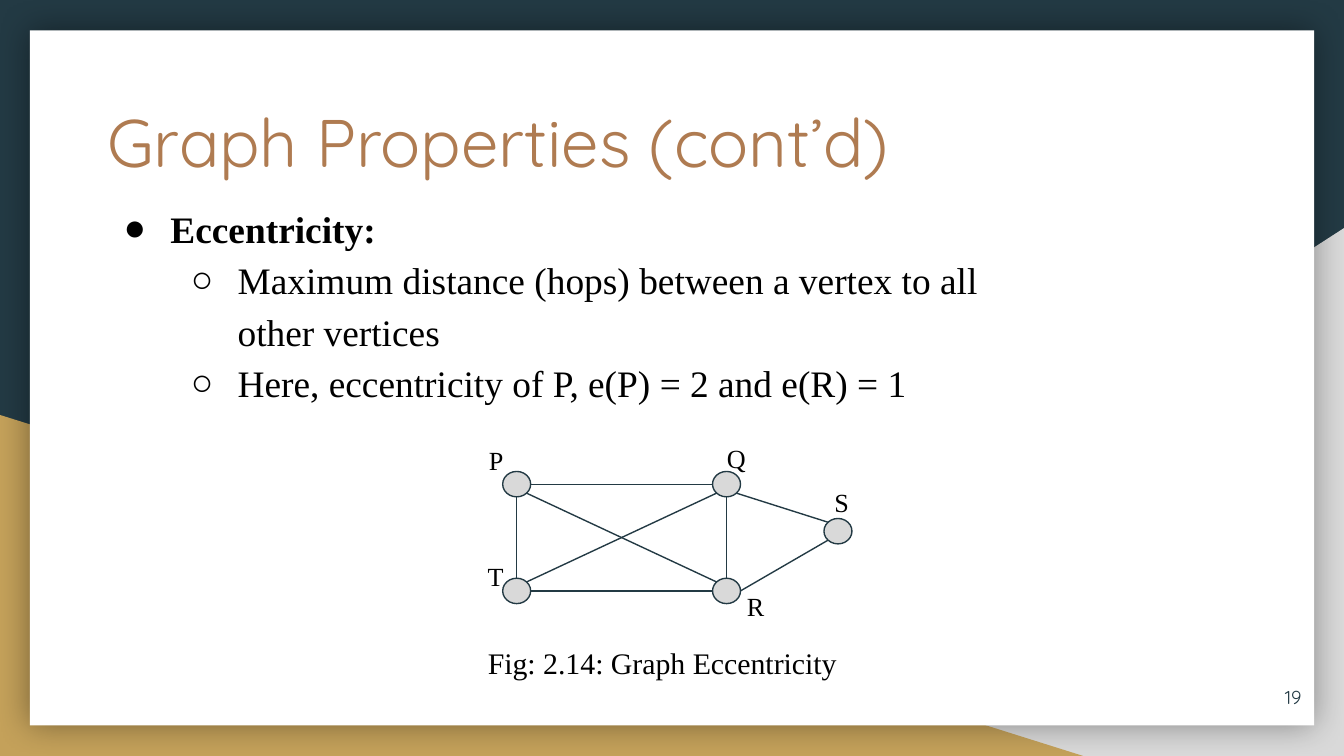
from dataclasses import dataclass
from math import sqrt
from typing import Optional

from lxml.etree import SubElement
from pptx import Presentation
from pptx.dml.color import RGBColor
from pptx.enum.shapes import MSO_CONNECTOR, MSO_SHAPE
from pptx.enum.text import MSO_ANCHOR, PP_ALIGN
from pptx.oxml.ns import qn
from pptx.util import Pt

DARK, GOLD, GREY, WHITE, BLACK = "233A44", "C4A15A", "D9D9D9", "FFFFFF", "000000"
BROWN = "AF7B51"
SERIF, SANS = "Times New Roman", "Quicksand"
NODE_WIDTH, NODE_HEIGHT = 15, 13.6
LINE_WIDTH = 0.75


@dataclass(frozen=True)
class Box:
    left: float
    top: float
    width: float
    height: float

    def lengths(self) -> tuple:
        """Return the four measures as lengths in points."""
        return Pt(self.left), Pt(self.top), Pt(self.width), Pt(self.height)


@dataclass(frozen=True)
class Style:
    font: str
    size: float
    color: str
    bold: bool = False


@dataclass(frozen=True)
class Vertex:
    x: float
    y: float
    label_left: float
    label_top: float

    def rim(self, across: int, down: int) -> tuple[float, float]:
        """Return the rim point in one of the eight compass directions."""
        reach = 0.5 / sqrt(across ** 2 + down ** 2)
        return self.x + across * reach * NODE_WIDTH, self.y + down * reach * NODE_HEIGHT


@dataclass(frozen=True)
class Edge:
    start: str
    start_side: tuple[int, int]
    end: str
    end_side: tuple[int, int]


@dataclass(frozen=True)
class Bullet:
    text: str
    sign: str
    indent: float
    bold: bool = False
    space_before: float = 0


LEFT_X, RIGHT_X, UPPER_Y, LOWER_Y = 276.8, 389.2, 259.4, 316.6
VERTICES = {
    "P": Vertex(LEFT_X, UPPER_Y, 254.9, 231.1),
    "Q": Vertex(RIGHT_X, UPPER_Y, 382.3, 229.7),
    "T": Vertex(LEFT_X, LOWER_Y, 254.2, 293),
    "R": Vertex(RIGHT_X, LOWER_Y, 393.1, 308.9),
    "S": Vertex(448.9, 284.6, 439.9, 253.4),
}
EDGES = [
    Edge("Q", (-1, 0), "P", (1, 0)),
    Edge("R", (-1, 0), "T", (1, 0)),
    Edge("R", (-1, -1), "P", (1, 1)),
    Edge("T", (1, -1), "Q", (-1, 1)),
    Edge("R", (1, 0), "S", (-1, 1)),
    Edge("Q", (1, 1), "S", (-1, -1)),
    Edge("R", (0, -1), "Q", (0, 1)),
    Edge("T", (0, -1), "P", (0, 1)),
]
BULLETS = [
    Bullet("Eccentricity:", "●", 36, True, 6),
    Bullet("Maximum distance (hops) between a vertex to all other vertices", "○", 72),
    Bullet("Here, eccentricity of P, e(P) = 2 and e(R) = 1", "○", 72),
]


def rgb(value: str) -> RGBColor:
    """Turn a hex string into a colour."""
    return RGBColor.from_string(value)


def add_panel(page, kind, box: Box, fill: str, line: Optional[str] = None):
    """Draw a filled preset shape with an optional outline."""
    shape = page.shapes.add_shape(kind, *box.lengths())
    shape.shadow.inherit = False
    shape.fill.solid()
    shape.fill.fore_color.rgb = rgb(fill)
    if line:
        shape.line.color.rgb = rgb(line)
        shape.line.width = Pt(LINE_WIDTH)
    else:
        shape.line.fill.background()
    return shape


def add_glow(shape) -> None:
    """Give a shape a soft dark shadow on all sides."""
    effects = shape._element.spPr.find(qn("a:effectLst"))
    shadow = SubElement(effects, qn("a:outerShdw"), blurRad=str(Pt(18)), dist="0",
                        dir="0", algn="ctr", rotWithShape="0")
    color = SubElement(shadow, qn("a:srgbClr"), val=BLACK)
    SubElement(color, qn("a:alpha"), val="40000")


def add_frame(page, box: Box):
    """Add an empty wrapping text box and return its frame."""
    frame = page.shapes.add_textbox(*box.lengths()).text_frame
    frame.word_wrap = True
    frame.margin_left = frame.margin_right = Pt(7.2)
    frame.margin_top = frame.margin_bottom = Pt(7.2)
    return frame


def format_spans(para, style: Style) -> None:
    """Apply a style to every run of a paragraph."""
    for span in para.runs:
        span.font.name = style.font
        span.font.size = Pt(style.size)
        span.font.bold = style.bold
        span.font.color.rgb = rgb(style.color)


def add_label(page, box: Box, text: str, style: Style,
              align=PP_ALIGN.LEFT, anchor=MSO_ANCHOR.TOP) -> None:
    """Write one paragraph in a text box."""
    frame = add_frame(page, box)
    frame.vertical_anchor = anchor
    frame.text = text
    frame.paragraphs[0].alignment = align
    format_spans(frame.paragraphs[0], style)


def add_bullets(page, box: Box, bullets: list[Bullet]) -> None:
    """Write the bulleted list."""
    frame = add_frame(page, box)
    for index, bullet in enumerate(bullets):
        para = frame.add_paragraph() if index else frame.paragraphs[0]
        para.text = bullet.text
        para.line_spacing = 1.15
        para.space_before = Pt(bullet.space_before)
        para.level = 1 if index else 0
        format_spans(para, Style(SERIF, 20, BLACK, bullet.bold))
        properties = para._p.get_or_add_pPr()
        properties.set("marL", str(Pt(bullet.indent)))
        properties.set("indent", str(Pt(-25)))
        color = SubElement(properties, qn("a:buClr"))
        SubElement(color, qn("a:srgbClr"), val=BLACK)
        SubElement(properties, qn("a:buFont"), typeface=SERIF)
        SubElement(properties, qn("a:buChar"), char=bullet.sign)


def add_edge(page, edge: Edge) -> None:
    """Join two vertices with a straight line."""
    start = VERTICES[edge.start].rim(*edge.start_side)
    end = VERTICES[edge.end].rim(*edge.end_side)
    line = page.shapes.add_connector(MSO_CONNECTOR.STRAIGHT,
                                     *(Pt(value) for value in start + end))
    line.line.color.rgb = rgb(DARK)
    line.line.width = Pt(LINE_WIDTH)
    SubElement(line._element.spPr, qn("a:effectLst"))


def add_graph(page) -> None:
    """Draw the vertices, edges and vertex names."""
    for vertex in VERTICES.values():
        box = Box(vertex.x - NODE_WIDTH / 2, vertex.y - NODE_HEIGHT / 2, NODE_WIDTH, NODE_HEIGHT)
        add_panel(page, MSO_SHAPE.OVAL, box, GREY, DARK)
    for edge in EDGES:
        add_edge(page, edge)
    for name, vertex in VERTICES.items():
        box = Box(vertex.label_left, vertex.label_top, 23.8, 22.3)
        add_label(page, box, name, Style(SERIF, 14, BLACK))


def main() -> None:
    """Build and save the deck."""
    deck = Presentation()
    deck.slide_width, deck.slide_height = Pt(720), Pt(405)
    page = deck.slides.add_slide(deck.slide_layouts[6])
    page.background.fill.solid()
    page.background.fill.fore_color.rgb = rgb(DARK)
    corner = add_panel(page, MSO_SHAPE.RIGHT_TRIANGLE, Box(282.2, 122.2, 437.8, 282.8), GREY)
    corner._element.spPr.xfrm.set("flipH", "1")
    add_panel(page, MSO_SHAPE.RIGHT_TRIANGLE, Box(0, 222.3, 580.3, 182.7), GOLD)
    add_glow(add_panel(page, MSO_SHAPE.RECTANGLE, Box(16, 16.3, 688, 372.4), WHITE))
    add_label(page, Box(50.4, 46.8, 457.2, 49), "Graph Properties (cont’d)", Style(SANS, 36, BROWN))
    add_bullets(page, Box(48.2, 99.4, 517.7, 125.3), BULLETS)
    add_graph(page)
    add_label(page, Box(661, 357.8, 43.2, 31), "19", Style(SANS, 10, DARK),
              PP_ALIGN.RIGHT, MSO_ANCHOR.MIDDLE)
    add_label(page, Box(254.2, 338.4, 209.5, 22.3), "Fig: 2.14: Graph Eccentricity",
              Style(SERIF, 16, BLACK))
    deck.save("out.pptx")


if __name__ == "__main__":
    main()
